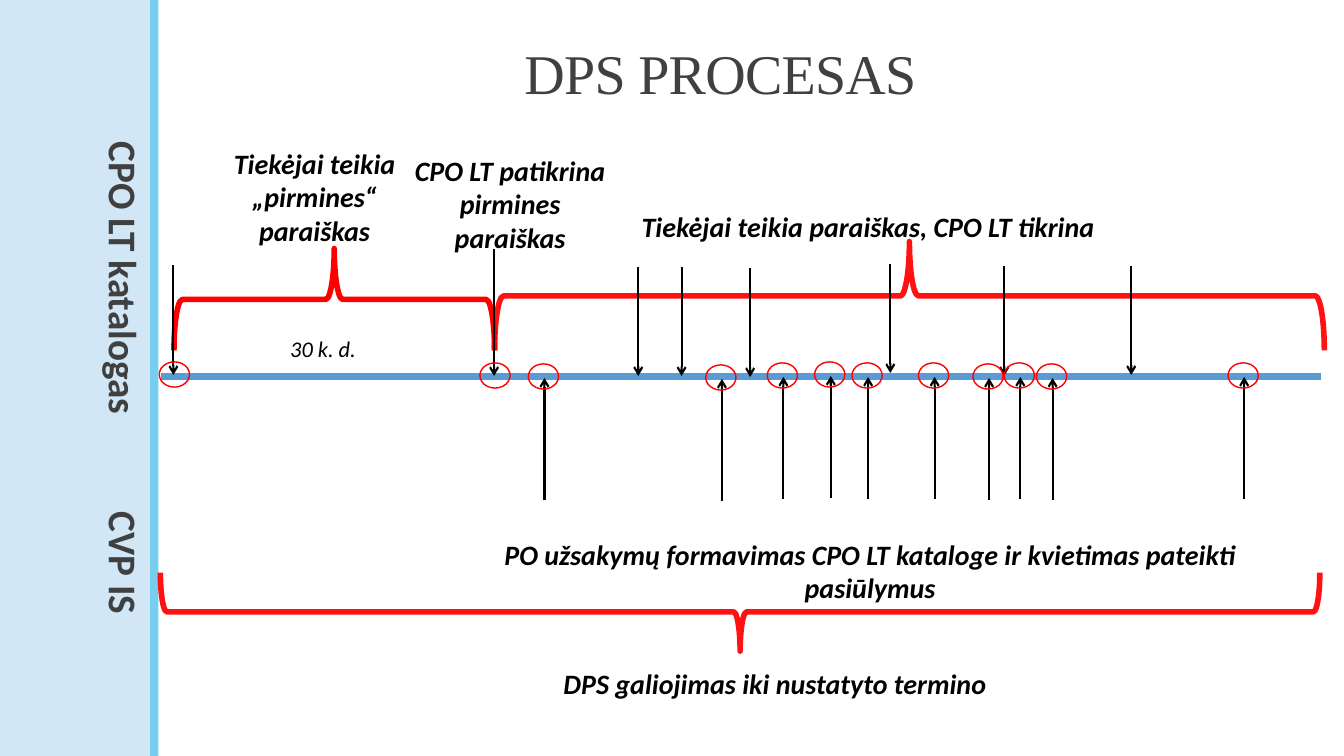
"""Build the DPS process timeline slide."""
from pptx import Presentation
from pptx.dml.color import RGBColor
from pptx.enum.shapes import MSO_CONNECTOR, MSO_SHAPE
from pptx.enum.text import MSO_ANCHOR, PP_ALIGN
from pptx.oxml.ns import qn
from pptx.util import Inches, Pt
from lxml.etree import SubElement


def shade(color, value):
    color.rgb = RGBColor.from_string(value)


def link(x1, y1, x2, y2, color, width):
    line = slide.shapes.add_connector(
        MSO_CONNECTOR.STRAIGHT, Inches(x1), Inches(y1), Inches(x2), Inches(y2))
    shade(line.line.color, color)
    line.line.width = Pt(width)
    SubElement(line._element.spPr, qn("a:effectLst"))
    return line


deck = Presentation()
deck.slide_width, deck.slide_height = Inches(13.33), Inches(7.5)
slide = deck.slides.add_slide(deck.slide_layouts[5])

for left, width, color in [(0, 1.49, "D1E7F6"), (1.49, 0.08, "77CEEF")]:
    bar = slide.shapes.add_shape(
        MSO_SHAPE.RECTANGLE, Inches(left), 0, Inches(width), Inches(7.5))
    bar.shadow.inherit = False
    bar.fill.solid()
    shade(bar.fill.fore_color, color)
    bar.line.fill.background()

title = slide.shapes.title
title.left, title.top = Inches(1.94), Inches(0.24)
title.width, title.height = Inches(10.41), Inches(1.06)
title.text_frame.text = "DPS PROCESAS"
title.text_frame.vertical_anchor = MSO_ANCHOR.MIDDLE
head = title.text_frame.paragraphs[0]
head.alignment = PP_ALIGN.CENTER
head.line_spacing = 0.85
run = head.runs[0]
run.font.name, run.font.size = "Times New Roman", Pt(40)
shade(run.font.color, "404040")
run.font._element.set("spc", "-50")

link(1.6, 3.74, 13.1, 3.74, "5B9BD5", 5)

braces = [
    (6.95, 0.32, 0.78, 11.5, 90, 93),
    (2.81, 1.38, 1.01, 3.18, 270, 100),
    (8.48, -1.18, 1.08, 8.23, 270, 93),
]
for left, top, width, height, turn, alpha in braces:
    brace = slide.shapes.add_shape(
        MSO_SHAPE.RIGHT_BRACE, Inches(left), Inches(top), Inches(width), Inches(height))
    brace.rotation = turn
    brace.shadow.inherit = False
    brace.fill.background()
    shade(brace.line.color, "FF0000")
    brace.line.width = Pt(4)
    if alpha < 100:
        tint = brace.line._ln.find(".//" + qn("a:srgbClr"))
        SubElement(tint, qn("a:alpha"), val=str(alpha * 1000))

downs = [
    (1.72, 2.63, 3.72), (4.9, 2.47, 3.73), (6.33, 2.65, 3.73), (6.76, 2.65, 3.73),
    (7.44, 2.66, 3.74), (8.83, 2.62, 3.7), (9.96, 2.64, 3.73), (11.22, 2.64, 3.72),
]
orders = [
    (5.4, 3.75), (7.16, 3.76), (7.77, 3.74), (8.24, 3.73), (8.61, 3.74),
    (9.27, 3.74), (9.81, 3.75), (10.12, 3.74), (10.44, 3.75), (12.34, 3.74),
]
ups = [(x, tip + 1.21, tip) for x, tip in orders]
for x, start, tip in downs + ups:
    arrow = link(x, start, x, tip, "000000", 1.5)
    SubElement(arrow.line._ln, qn("a:tailEnd"), type="arrow")

rings = [(1.73, 3.72), (4.91, 3.73)] + [(x - 0.01, tip - 0.01) for x, tip in orders]
for x, y in rings:
    ring = slide.shapes.add_shape(
        MSO_SHAPE.OVAL, Inches(x - 0.15), Inches(y - 0.13), Inches(0.3), Inches(0.25))
    ring.shadow.inherit = False
    ring.fill.background()
    shade(ring.line.color, "FF0000")
    ring.line.width = Pt(1)

center, start = PP_ALIGN.CENTER, PP_ALIGN.LEFT
labels = [
    ("Tiekėjai teikia „pirmines“ paraiškas", 1.98, 1.4, 2.28, 1.11, 20, True, center),
    ("CPO LT patikrina\npirmines paraiškas", 3.97, 1.47, 2.18, 1.11, 20, True, center),
    ("Tiekėjai teikia paraiškas, CPO LT tikrina", 5.69, 2.03, 5.84, 0.44, 20, True, center),
    ("30 k. d.", 2.78, 3.28, 0.91, 0.37, 16, False, start),
    ("PO užsakymų formavimas CPO LT kataloge ir kvietimas pateikti pasiūlymus",
     4.39, 5.28, 8.48, 0.77, 20, True, center),
    ("DPS galiojimas iki nustatyto termino", 5.49, 6.56, 4.48, 0.44, 20, True, start),
]
for text, left, top, width, height, size, bold, align in labels:
    box = slide.shapes.add_textbox(Inches(left), Inches(top), Inches(width), Inches(height))
    box.text_frame.word_wrap = True
    box.text_frame.text = text
    for para in box.text_frame.paragraphs:
        para.alignment = align
        font = para.runs[0].font
        font.name, font.size = "Calibri", Pt(size)
        font.bold, font.italic = bold, True
        shade(font.color, "000000")

side = slide.shapes.add_textbox(Inches(0.98), Inches(1.31), Inches(0.45), Inches(5.65))
frame = side.text_frame
frame.word_wrap = True
frame.margin_left = frame.margin_right = 0
frame.margin_top = frame.margin_bottom = Inches(0.05)
frame.vertical_anchor = MSO_ANCHOR.MIDDLE
frame._txBody.bodyPr.set("vert", "vert")
frame.text = "CPO LT katalogas\tCVP IS"
para = frame.paragraphs[0]
para.line_spacing = 0.9
tabs = SubElement(para._p.get_or_add_pPr(), qn("a:tabLst"))
SubElement(tabs, qn("a:tab"), pos=str(Inches(3.67)), algn="l")
for run in para.runs:
    run.font.name, run.font.size, run.font.bold = "Calibri", Pt(28), True
    shade(run.font.color, "404040")

deck.save("out.pptx")
